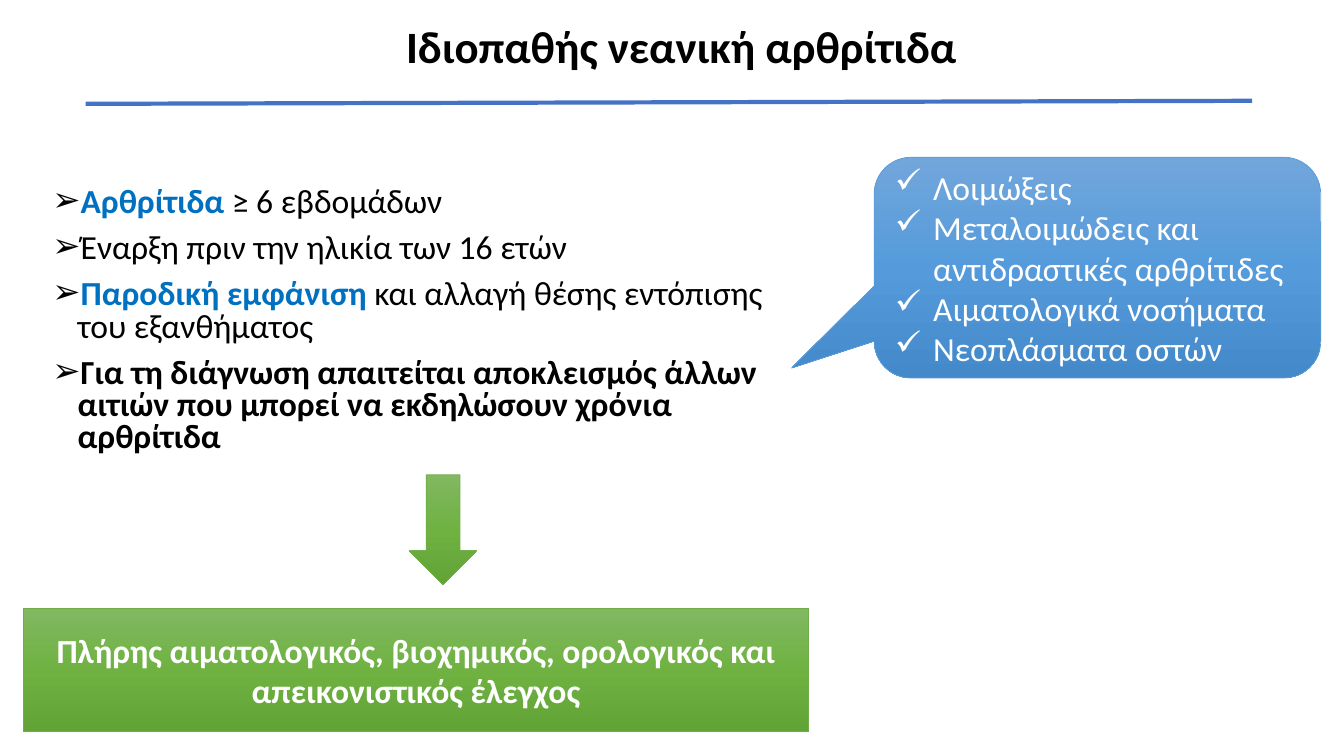
"""Build a slide on the diagnosis of juvenile idiopathic arthritis."""
import copy

import pptx
import pptx.dml.color
import pptx.enum.shapes
import pptx.enum.text
import pptx.oxml
import pptx.oxml.ns
import pptx.util

RGBColor = pptx.dml.color.RGBColor
BLACK = RGBColor(0x00, 0x00, 0x00)
WHITE = RGBColor(0xFF, 0xFF, 0xFF)
ACCENT = RGBColor(0x00, 0x70, 0xC0)
RULE_BLUE = RGBColor(0x44, 0x72, 0xC4)
BLUE_LINE = RGBColor(0x5B, 0x9B, 0xD5)
GREEN_LINE = RGBColor(0x70, 0xAD, 0x47)
BLUES = (RGBColor(0x71, 0xA6, 0xDB), RGBColor(0x55, 0x9B, 0xDB), RGBColor(0x44, 0x8A, 0xCA))
GREENS = (RGBColor(0x81, 0xB8, 0x61), RGBColor(0x6F, 0xB2, 0x42), RGBColor(0x62, 0xA3, 0x36))

TITLE = "Ιδιοπαθής νεανική αρθρίτιδα"
CRITERIA = [
    [("Αρθρίτιδα ", ACCENT, True), ("≥ 6 εβδομάδων", BLACK, False)],
    [("Έναρξη πριν την ηλικία των 16 ετών", BLACK, False)],
    [("Παροδική εμφάνιση ", ACCENT, True),
     ("και αλλαγή θέσης εντόπισης του εξανθήματος", BLACK, False)],
    [("Για τη διάγνωση απαιτείται αποκλεισμός άλλων αιτιών που μπορεί "
      "να εκδηλώσουν χρόνια αρθρίτιδα", BLACK, True)],
]
EXCLUSIONS = [
    [(text, WHITE, False)] for text in (
        "Λοιμώξεις",
        "Μεταλοιμώδεις και αντιδραστικές αρθρίτιδες",
        "Αιματολογικά νοσήματα",
        "Νεοπλάσματα οστών",
    )
]
WORKUP = [[("Πλήρης αιματολογικός, βιοχημικός, ορολογικός και απεικονιστικός έλεγχος",
            WHITE, True)]]

WIDTH, HEIGHT = 13.33, 7.5
TITLE_BOX = (0.92, 0.03, 11.5, 0.92)
CRITERIA_BOX = (0.42, 1.32, 7.6, 3.56)
CALLOUT_BOX = (8.67, 1.56, 4.43, 2.19)
ARROW_BOX = (4.06, 4.71, 0.67, 1.09)
WORKUP_BOX = (0.23, 6.04, 7.79, 1.22)
RULE = (0.85, 1.03, 12.42, 1)


def inches(values):
    return [pptx.util.Inches(value) for value in values]


def place(shape, box):
    shape.left, shape.top, shape.width, shape.height = inches(box)


def add_bullet(paragraph, character, indent, color=None):
    properties = paragraph._p.get_or_add_pPr()
    properties.set("marL", str(pptx.util.Inches(indent)))
    properties.set("indent", str(-pptx.util.Inches(indent)))
    namespace = pptx.oxml.ns.nsdecls("a")
    if color is not None:
        properties.append(pptx.oxml.parse_xml(
            f'<a:buClr {namespace}><a:srgbClr val="{color}"/></a:buClr>'))
    properties.append(pptx.oxml.parse_xml(f'<a:buChar {namespace} char="{character}"/>'))


def write(text_frame, lines, size=24):
    """Write each line as a paragraph of (text, colour, bold) runs."""
    text_frame.word_wrap = True
    text_frame.auto_size = pptx.enum.text.MSO_AUTO_SIZE.NONE
    for index, pieces in enumerate(lines):
        paragraph = text_frame.add_paragraph() if index else text_frame.paragraphs[0]
        for text, color, bold in pieces:
            run = paragraph.add_run()
            run.text = text
            run.font.name = "Calibri"
            run.font.size = pptx.util.Pt(size)
            run.font.bold = bold
            run.font.color.rgb = color
    return text_frame.paragraphs


def add_gradient_shape(slide, kind, box, colors, line_color):
    shape = slide.shapes.add_shape(kind, *inches(box))
    shape.shadow.inherit = False
    shape.fill.gradient()
    shape.fill.gradient_angle = 270
    stop_list = shape._element.spPr.find(".//" + pptx.oxml.ns.qn("a:gsLst"))
    stop_list.insert(1, copy.deepcopy(stop_list[0]))
    for index, (stop, color) in enumerate(zip(shape.fill.gradient_stops, colors)):
        stop.position = index / 2
        stop.color.rgb = color
    shape.line.color.rgb = line_color
    shape.line.width = pptx.util.Pt(0.5)
    shape.text_frame.vertical_anchor = pptx.enum.text.MSO_ANCHOR.MIDDLE
    return shape


def main():
    presentation = pptx.Presentation()
    presentation.slide_width, presentation.slide_height = inches((WIDTH, HEIGHT))
    slide = presentation.slides.add_slide(presentation.slide_layouts[1])
    alignment = pptx.enum.text.PP_ALIGN
    shapes = pptx.enum.shapes.MSO_SHAPE

    title, body = slide.placeholders
    place(title, TITLE_BOX)
    title.text_frame.margin_left = pptx.util.Inches(0.28)
    title.text_frame.vertical_anchor = pptx.enum.text.MSO_ANCHOR.MIDDLE
    heading, = write(title.text_frame, [[(TITLE, BLACK, True)]], 32)
    heading.alignment = alignment.CENTER
    heading.line_spacing = 0.9

    place(body, CRITERIA_BOX)
    body.text_frame.margin_top = pptx.util.Inches(0.54)
    for index, paragraph in enumerate(write(body.text_frame, CRITERIA)):
        paragraph.line_spacing = 0.8
        paragraph.space_before = pptx.util.Pt(10 if index else 0)
        add_bullet(paragraph, "➢", 0.25, BLACK)

    callout = add_gradient_shape(
        slide, shapes.ROUNDED_RECTANGULAR_CALLOUT, CALLOUT_BOX, BLUES, BLUE_LINE)
    for index, value in enumerate((-0.685, 0.455, 0.167)):
        callout.adjustments[index] = value
    for paragraph in write(callout.text_frame, EXCLUSIONS):
        paragraph.alignment = alignment.LEFT
        add_bullet(paragraph, "✓", 0.38)

    add_gradient_shape(slide, shapes.DOWN_ARROW, ARROW_BOX, GREENS, GREEN_LINE)
    workup = add_gradient_shape(slide, shapes.RECTANGLE, WORKUP_BOX, GREENS, GREEN_LINE)
    write(workup.text_frame, WORKUP)[0].alignment = alignment.CENTER

    rule = slide.shapes.add_connector(
        pptx.enum.shapes.MSO_CONNECTOR.STRAIGHT, *inches(RULE))
    rule.line.color.rgb = RULE_BLUE
    rule.line.width = pptx.util.Pt(3)
    rule._element.spPr.append(pptx.oxml.parse_xml(
        f'<a:effectLst {pptx.oxml.ns.nsdecls("a")}/>'))

    presentation.save("out.pptx")


if __name__ == "__main__":
    main()
